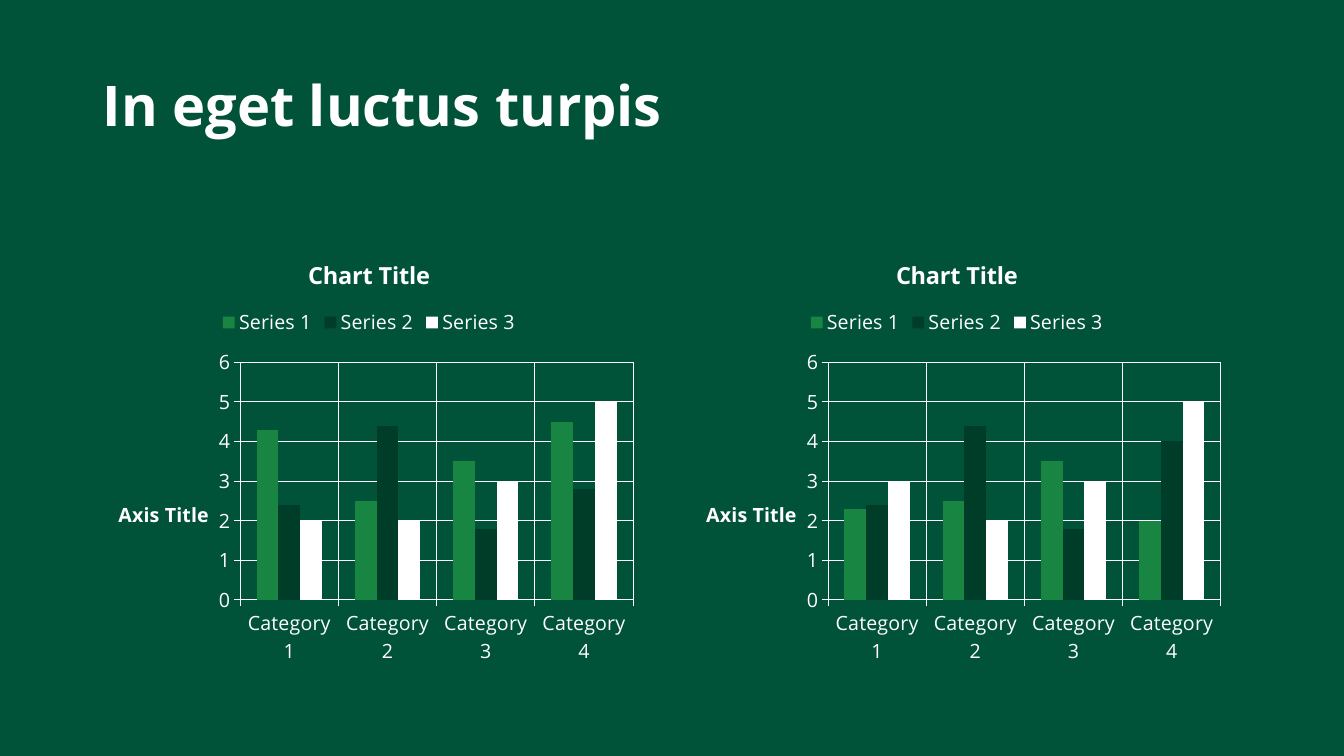
import pptx
import pptx.chart.data
import pptx.dml.color
import pptx.enum.chart
import pptx.enum.text
import pptx.util
from pptx.oxml import parse_xml
from pptx.util import Inches

GREEN = pptx.dml.color.RGBColor(0x00, 0x52, 0x38)
LEAF = pptx.dml.color.RGBColor(0x18, 0x86, 0x42)
FOREST = pptx.dml.color.RGBColor(0x00, 0x3D, 0x29)
WHITE = pptx.dml.color.RGBColor(0xFF, 0xFF, 0xFF)
FONT = "Open Sans"
CHART_NS = "http://schemas.openxmlformats.org/drawingml/2006/chart"

CATEGORIES = [f"Category {number}" for number in range(1, 5)]
SERIES_COLORS = [LEAF, FOREST, WHITE]
LEFT_VALUES = [(4.3, 2.5, 3.5, 4.5), (2.4, 4.4, 1.8, 2.8), (2, 2, 3, 5)]
RIGHT_VALUES = [(2.3, 2.5, 3.5, 2), (2.4, 4.4, 1.8, 4), (3, 2, 3, 5)]


def format_font(font, size, bold=False):
    """Give a font the slide's typeface and colour."""
    font.name = FONT
    font.size = pptx.util.Pt(size)
    font.bold = bold
    font.color.rgb = WHITE


def write_text(frame, text, size, bold=False, line_spacing=None):
    """Write one formatted paragraph into a text frame."""
    paragraph = frame.paragraphs[0]
    paragraph.line_spacing = line_spacing
    run = paragraph.add_run()
    run.text = text
    format_font(run.font, size, bold)


def manual_layout(target, **fractions):
    """Build a chart layout from fractions of the chart's size."""
    target_tag = f'<c:layoutTarget val="{target}"/>' if target else ""
    sizes = "".join(f'<c:{key} val="{value}"/>' for key, value in fractions.items())
    return parse_xml(
        f'<c:layout xmlns:c="{CHART_NS}"><c:manualLayout>{target_tag}'
        f'<c:xMode val="edge"/><c:yMode val="edge"/>{sizes}'
        "</c:manualLayout></c:layout>"
    )


def place(element, layout):
    """Replace the layout of a chart part."""
    for old in element.findall(f"{{{CHART_NS}}}layout"):
        element.remove(old)
    text = element.find(f"{{{CHART_NS}}}tx")
    if text is None:
        element.insert(0, layout)
    else:
        text.addnext(layout)


def style_axis(axis):
    """Give an axis white lines, outside ticks and gridlines."""
    axis.has_major_gridlines = True
    axis.major_tick_mark = pptx.enum.chart.XL_TICK_MARK.OUTSIDE
    axis.minor_tick_mark = pptx.enum.chart.XL_TICK_MARK.NONE
    format_font(axis.tick_labels.font, 14)
    for line in (axis.format.line, axis.major_gridlines.format.line):
        line.color.rgb = WHITE
        line.width = pptx.util.Pt(0.75)


def add_heading(slide, left, top, width, height):
    """Add the slide heading."""
    frame = slide.shapes.add_textbox(left, top, width, height).text_frame
    frame.word_wrap = True
    frame.margin_top = 0
    frame.vertical_anchor = pptx.enum.text.MSO_ANCHOR.TOP
    write_text(frame, "In eget luctus turpis", 40, bold=True, line_spacing=0.9)


def add_column_chart(slide, values, left, top, width, height):
    """Add a clustered column chart with its titles and legend."""
    data = pptx.chart.data.CategoryChartData()
    data.categories = CATEGORIES
    for number, series_values in enumerate(values, 1):
        data.add_series(f"Series {number}", series_values)
    kind = pptx.enum.chart.XL_CHART_TYPE.COLUMN_CLUSTERED
    chart = slide.shapes.add_chart(kind, left, top, width, height, data).chart
    format_font(chart.font, 14)

    write_text(chart.chart_title.text_frame, "Chart Title", 16.8, bold=True)
    chart.chart_title.include_in_layout = False
    chart.has_legend = True
    chart.legend.position = pptx.enum.chart.XL_LEGEND_POSITION.TOP
    chart.legend.include_in_layout = False
    format_font(chart.legend.font, 14)

    plot = chart.plots[0]
    plot.gap_width = 150
    plot.overlap = 0
    plot.vary_by_categories = False
    for series, color in zip(plot.series, SERIES_COLORS):
        series.format.fill.solid()
        series.format.fill.fore_color.rgb = color

    style_axis(chart.category_axis)
    value_axis = chart.value_axis
    style_axis(value_axis)
    value_axis.minimum_scale = 0
    value_axis.maximum_scale = 6
    value_axis.major_unit = 1
    axis_title = value_axis.axis_title
    write_text(axis_title.text_frame, "Axis Title", 14, bold=True)
    body = axis_title.text_frame._txBody.bodyPr
    body.set("rot", "0")
    body.set("vert", "horz")

    place(axis_title._element, manual_layout("", x=0.04, y=0.59))
    plot_area = chart._chartSpace.chart.plotArea
    place(plot_area, manual_layout("inner", x=0.267, y=0.285, w=0.711, h=0.545))


def main():
    """Build and save the slide."""
    deck = pptx.Presentation()
    deck.slide_width, deck.slide_height = Inches(13.33), Inches(7.5)
    slide = deck.slides.add_slide(deck.slide_layouts[6])
    slide.background.fill.solid()
    slide.background.fill.fore_color.rgb = GREEN

    add_heading(slide, Inches(0.92), Inches(0.78), Inches(9.77), Inches(1.45))
    for left, values in ((0.92, LEFT_VALUES), (6.75, RIGHT_VALUES)):
        add_column_chart(slide, values, Inches(left), Inches(2.36), Inches(5.48), Inches(4.33))
    deck.save("out.pptx")


if __name__ == "__main__":
    main()
